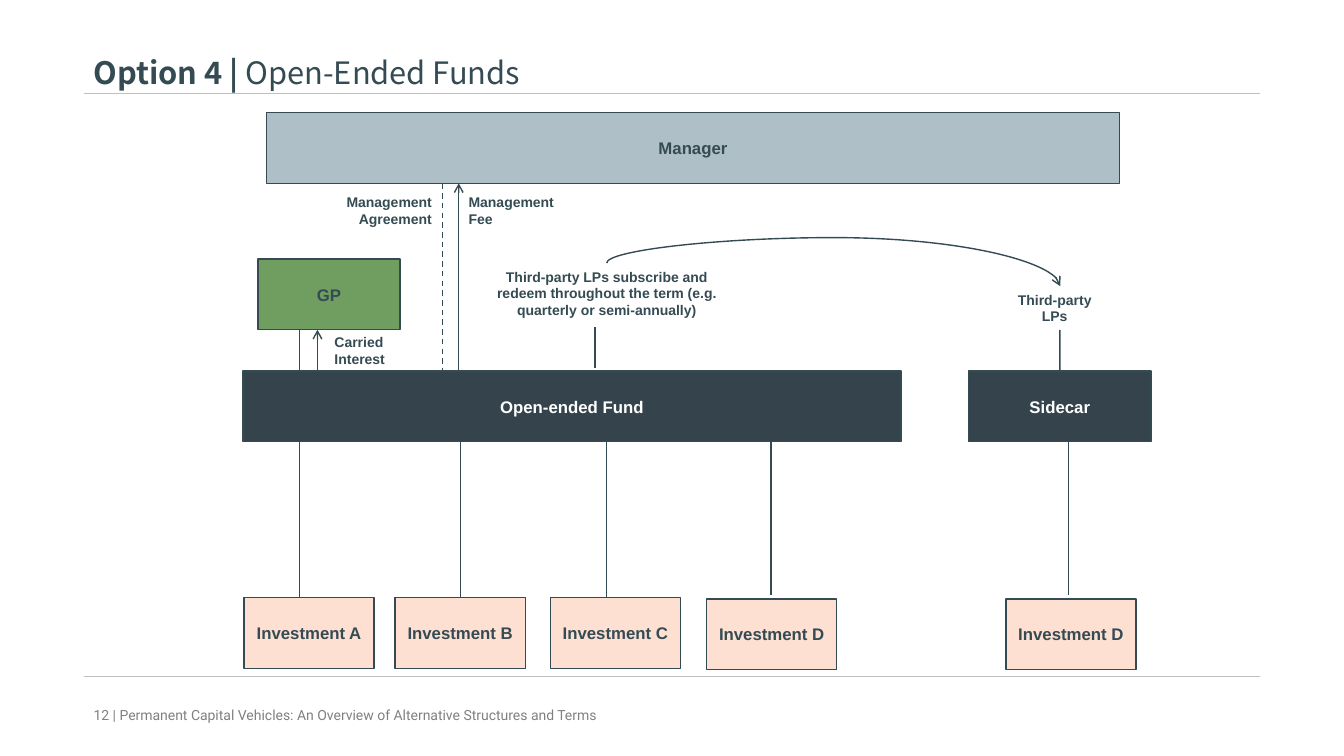
from dataclasses import dataclass

from lxml import etree
from pptx import Presentation
from pptx.dml.color import RGBColor
from pptx.enum.dml import MSO_LINE
from pptx.enum.shapes import MSO_CONNECTOR, MSO_SHAPE
from pptx.enum.text import MSO_ANCHOR, PP_ALIGN
from pptx.oxml.ns import qn
from pptx.util import Cm, Pt

STRAIGHT, CURVE = MSO_CONNECTOR.STRAIGHT, MSO_CONNECTOR.CURVE
RECTANGLE = MSO_SHAPE.RECTANGLE
LEFT, CENTER, RIGHT = PP_ALIGN.LEFT, PP_ALIGN.CENTER, PP_ALIGN.RIGHT
TOP, MIDDLE = MSO_ANCHOR.TOP, MSO_ANCHOR.MIDDLE
DASH = MSO_LINE.DASH
TOP_SIDE = 0


@dataclass(frozen=True)
class Theme:
    ink: str = "354B54"
    fund: str = "35444C"
    manager: str = "AFBFC7"
    partner: str = "709E61"
    investment: str = "FDE0D1"
    white: str = "FFFFFF"
    rule: str = "BFBFBF"
    footer: str = "808080"
    title_font: str = "Noto Sans CJK JP"
    body_font: str = "Arial"
    footer_font: str = "Roboto"
    title_size: int = 22
    box_size: int = 12
    label_size: int = 10


class Diagram:
    def __init__(self, page, theme):
        self.page = page
        self.theme = theme

    def style(self, span, size, font, color, bold):
        span.font.size = Pt(size)
        span.font.name = font
        span.font.bold = bold
        span.font.color.rgb = RGBColor.from_string(color)

    def text(self, left, top, width, height, spans, size, font, color, align=LEFT, anchor=MIDDLE):
        box = self.page.shapes.add_textbox(Cm(left), Cm(top), Cm(width), Cm(height))
        frame = box.text_frame
        frame.word_wrap = True
        frame.vertical_anchor = anchor
        para = frame.paragraphs[0]
        para.alignment = align
        for words, bold in spans:
            span = para.add_run()
            span.text = words
            self.style(span, size, font, color, bold)

    def label(self, left, top, width, height, words, align=LEFT):
        theme = self.theme
        self.text(left, top, width, height, [(words, True)], theme.label_size,
                  theme.body_font, theme.ink, align, TOP)

    def box(self, left, top, width, words, fill, color):
        box = self.page.shapes.add_shape(RECTANGLE, Cm(left), Cm(top), Cm(width), Cm(1.78))
        box.shadow.inherit = False
        box.fill.solid()
        box.fill.fore_color.rgb = RGBColor.from_string(fill)
        box.line.color.rgb = RGBColor.from_string(self.theme.ink)
        box.line.width = Pt(1)
        frame = box.text_frame
        frame.text = words
        frame.word_wrap = True
        frame.vertical_anchor = MIDDLE
        para = frame.paragraphs[0]
        para.alignment = CENTER
        self.style(para.runs[0], self.theme.box_size, self.theme.body_font, color, True)
        return box

    def line(self, x1, y1, x2, y2, kind=STRAIGHT, color=None, weight=1, arrow=False, dash=None):
        line = self.page.shapes.add_connector(kind, Cm(x1), Cm(y1), Cm(x2), Cm(y2))
        line.line.color.rgb = RGBColor.from_string(color or self.theme.ink)
        line.line.width = Pt(weight)
        if dash:
            line.line.dash_style = dash
        properties = line._element.spPr
        if arrow:
            etree.SubElement(properties.find(qn("a:ln")), qn("a:tailEnd"), type="arrow")
        etree.SubElement(properties, qn("a:effectLst"))
        return line

    def arc(self, x1, y1, x2, y2, bend):
        across, down = x2 - x1, y2 - y1
        middle_x, middle_y = (x1 + x2) / 2, (y1 + y2) / 2
        arc = self.line(middle_x + down / 2, middle_y - across / 2,
                        middle_x - down / 2, middle_y + across / 2, CURVE, arrow=True)
        properties = arc._element.spPr
        properties.find(qn("a:xfrm")).set("rot", str(270 * 60000))
        guides = properties.find(qn("a:prstGeom")).find(qn("a:avLst"))
        etree.SubElement(guides, qn("a:gd"), name="adj1", fmla=f"val {bend}")


def main():
    deck = Presentation()
    deck.slide_width, deck.slide_height = Cm(33.87), Cm(19.05)
    page = deck.slides.add_slide(deck.slide_layouts[6])
    theme = Theme()
    diagram = Diagram(page, theme)

    for y, weight in [(2.36, 1), (17.04, 0.75)]:
        diagram.line(2.11, y, 31.75, y, color=theme.rule, weight=weight)
    diagram.text(2.11, 1.22, 29.64, 1.19, [("Option 4 | ", True), ("Open-Ended Funds", False)],
                 theme.title_size, theme.title_font, theme.ink)
    diagram.text(2.11, 17.5, 15.47, 1.02,
                 [("12 | Permanent Capital Vehicles: An Overview of Alternative Structures and Terms", False)],
                 theme.label_size, theme.footer_font, theme.footer)

    fund_top, fund_bottom = 9.35, 11.13
    diagram.box(6.71, 2.84, 21.51, "Manager", theme.manager, theme.ink)
    diagram.box(6.5, 6.53, 3.58, "GP", theme.partner, theme.ink)
    diagram.box(6.12, fund_top, 16.59, "Open-ended Fund", theme.fund, theme.white)
    sidecar = diagram.box(24.41, fund_top, 4.6, "Sidecar", theme.fund, theme.white)

    investments = {}
    for left, top, name, line_x, line_bottom in [
        (6.15, 15.06, "Investment A", 7.54, 15.06),
        (9.96, 15.06, "Investment B", 11.6, 15.06),
        (13.87, 15.06, "Investment C", 15.29, 15.06),
        (17.81, 15.09, "Investment D", 19.43, 14.99),
        (25.35, 15.09, "Investment D", 26.92, 14.99),
    ]:
        box = diagram.box(left, top, 3.28, name, theme.investment, theme.ink)
        line = diagram.line(line_x, line_bottom, line_x, fund_bottom)
        investments.setdefault(name, (box, line))
    box, line = investments["Investment B"]
    line.begin_connect(box, TOP_SIDE)

    diagram.line(7.54, fund_top, 7.54, 8.31)
    diagram.line(8, fund_top, 8, 8.31, arrow=True)
    diagram.line(11.15, 4.62, 11.15, fund_top, dash=DASH)
    diagram.line(11.56, fund_top, 11.56, 4.62, arrow=True)
    diagram.line(14.99, 9.27, 14.99, 8.23)
    sidecar_line = diagram.line(26.71, fund_top, 26.71, 8.31)
    sidecar_line.begin_connect(sidecar, TOP_SIDE)
    diagram.arc(15.29, 6.63, 26.72, 7.21, -110800)

    diagram.label(12.19, 6.63, 6.2, 1.55,
                  "Third-party LPs subscribe and redeem throughout the term (e.g. quarterly or semi-annually)",
                  CENTER)
    diagram.label(25.22, 7.21, 2.72, 1.12, "Third-party LPs", CENTER)
    diagram.label(11.56, 4.75, 3.05, 1.12, "Management Fee")
    diagram.label(8.13, 4.75, 3, 1.12, "Management Agreement", RIGHT)
    diagram.label(8.18, 8.28, 2.59, 1.12, "Carried Interest")

    deck.save("out.pptx")


if __name__ == "__main__":
    main()
